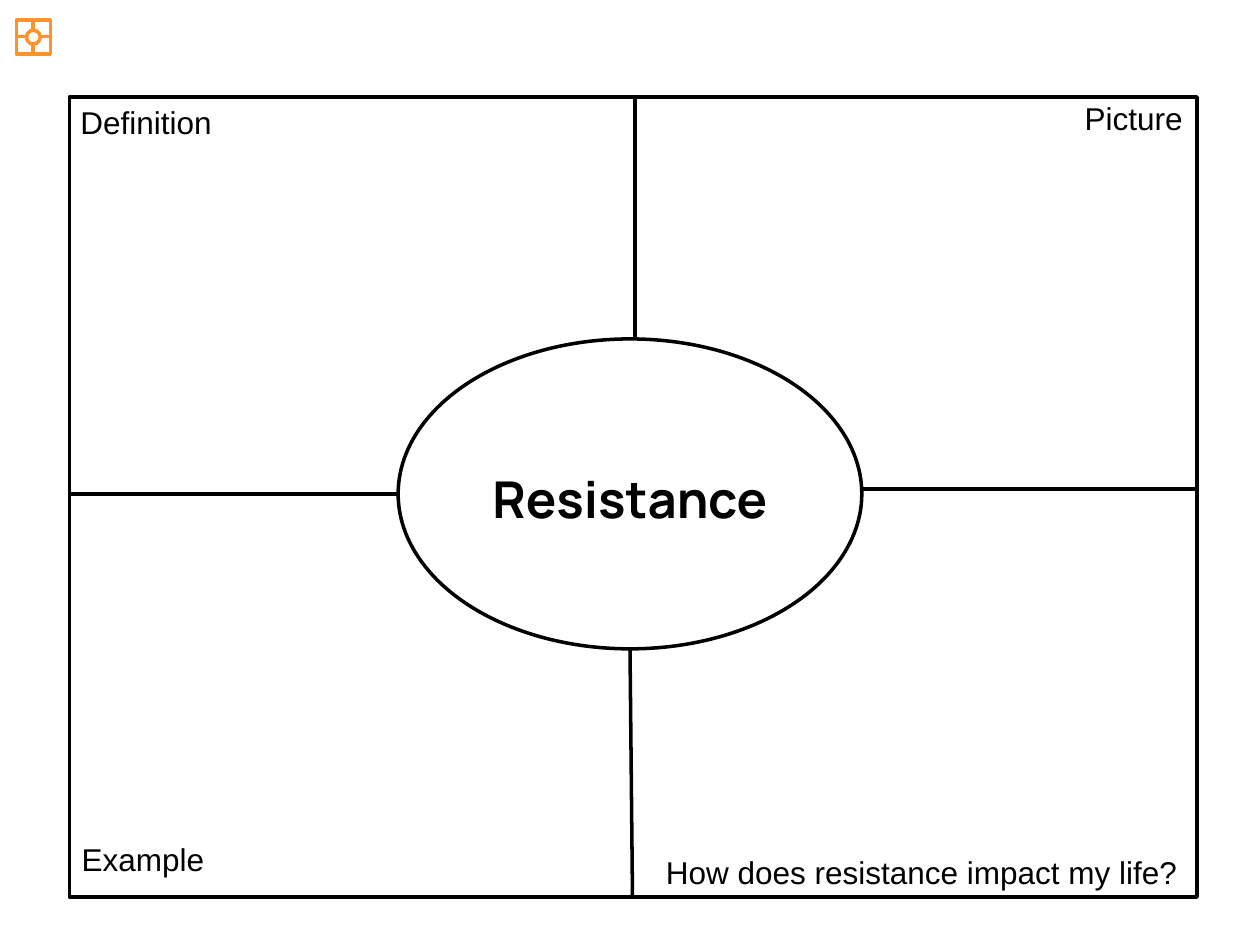
"""Build a Frayer model slide for the word Resistance."""
from lxml.etree import SubElement
from pptx import Presentation
from pptx.dml.color import RGBColor
from pptx.enum.shapes import MSO_CONNECTOR, MSO_SHAPE
from pptx.enum.text import MSO_AUTO_SIZE, PP_ALIGN
from pptx.oxml.ns import qn
from pptx.util import Emu, Pt

SCALE = 9144
BLACK, ORANGE, WHITE = "000000", "FF932B", "FFFFFF"


def px(*sizes):
    """Turn lengths in px into EMU."""
    return [Emu(size * SCALE) for size in sizes]


def tint(code):
    """Turn a hex string into a colour."""
    return RGBColor.from_string(code)


class Sketch:
    """Hold the style and the current slide."""

    def __init__(self, deck, font="Arial", size=18, width=2):
        """Add a blank slide and keep the style."""
        self.slide = deck.slides.add_slide(deck.slide_layouts[6])
        self.font, self.size, self.width = font, size, width

    def stroke(self, item, color):
        """Set the line of a shape or connector."""
        item.line.color.rgb = tint(color)
        item.line.width = Pt(self.width)

    def shape(self, kind, box, color, fill=None):
        """Add an outlined shape."""
        item = self.slide.shapes.add_shape(kind, *px(*box))
        item.shadow.inherit = False
        if fill:
            item.fill.solid()
            item.fill.fore_color.rgb = tint(fill)
        else:
            item.fill.background()
        self.stroke(item, color)

    def line(self, ends, color):
        """Add a straight line."""
        item = self.slide.shapes.add_connector(MSO_CONNECTOR.STRAIGHT, *px(*ends))
        self.stroke(item, color)
        SubElement(item._element.spPr, qn("a:effectLst"))

    def frayer(self, frame, oval, spokes, color):
        """Add a frame split by four spokes around an oval."""
        self.shape(MSO_SHAPE.RECTANGLE, frame, color)
        for ends in spokes:
            self.line(ends, color)
        self.shape(MSO_SHAPE.OVAL, oval, color, WHITE)

    def text(self, words, box, align=PP_ALIGN.LEFT, font=None, size=None, bold=False):
        """Add a text box with one run."""
        frame = self.slide.shapes.add_textbox(*px(*box)).text_frame
        frame.word_wrap = True
        frame.auto_size = MSO_AUTO_SIZE.SHAPE_TO_FIT_TEXT
        para = frame.paragraphs[0]
        para.alignment = align
        run = para.add_run()
        run.text = words
        run.font.name = font or self.font
        run.font.size = Pt(size or self.size)
        run.font.bold = bold
        run.font.color.rgb = tint(BLACK)


def main():
    """Build and save the deck."""
    deck = Presentation()
    deck.slide_width, deck.slide_height = px(1000, 750)
    page = Sketch(deck)
    page.frayer(
        (55, 77, 895, 635),
        (316, 269, 368, 246),
        [(504, 77, 504, 269), (500, 515, 502, 711),
         (55, 392, 316, 392), (684, 388, 950, 388)],
        BLACK,
    )
    page.text("Resistance", (327, 366, 346, 59), PP_ALIGN.CENTER, "Manrope", 29, True)
    labels = [
        ("Definition", (54, 77, 125, 40), PP_ALIGN.LEFT),
        ("Example", (55, 662, 118, 40), PP_ALIGN.LEFT),
        ("Picture", (851, 74, 99, 40), PP_ALIGN.LEFT),
        ("How does resistance impact my life?", (495, 672, 449, 40), PP_ALIGN.RIGHT),
    ]
    for words, box, align in labels:
        page.text(words, box, align)
    page.frayer(
        (13, 16, 27, 27),
        (21, 24, 11, 11),
        [(26, 16, 26, 24), (26, 35, 26, 43), (13, 29, 21, 29), (32, 29, 40, 29)],
        ORANGE,
    )
    deck.save("out.pptx")


if __name__ == "__main__":
    main()
